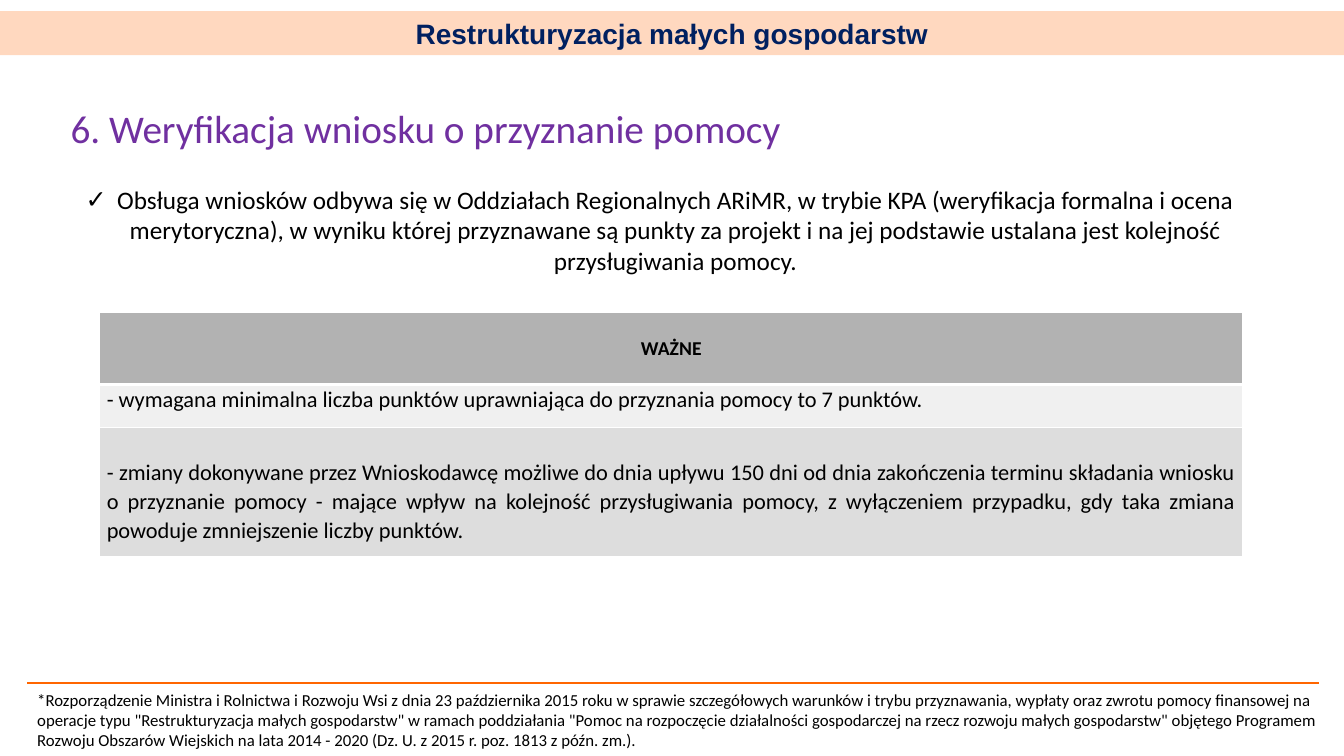
import pptx
import pptx.dml.color
import pptx.enum.shapes
import pptx.enum.text
import pptx.oxml
import pptx.oxml.ns
import pptx.util

Pt = pptx.util.Pt
ALIGN = pptx.enum.text.PP_ALIGN
ANCHOR = pptx.enum.text.MSO_ANCHOR
COLORS = {
    "text": "000000", "heading": "7030A0", "banner_text": "002060",
    "orange": "FF6600", "white": "FFFFFF",
    "head_row": "B2B2B2", "light_row": "F0F0F0", "dark_row": "DDDDDD",
}


def rgb(name):
    return pptx.dml.color.RGBColor.from_string(COLORS[name])


def add_xml(parent, xml):
    ns = pptx.oxml.ns.nsdecls("a")
    parent.append(pptx.oxml.parse_xml(xml.replace("/>", f" {ns}/>", 1)
                                      if xml.endswith("/>") and xml.count("<") == 1
                                      else xml.replace(">", f" {ns}>", 1)))


def write(tf, text, size=16, color="text", font="Calibri", bold=False,
          align=ALIGN.LEFT, spacing=1.0, after=0, bullet=None, indent=0):
    p = tf.paragraphs[0]
    p.alignment = align
    p.line_spacing = spacing
    p.space_before, p.space_after = Pt(0), Pt(after)
    if bullet:
        pPr = p._p.get_or_add_pPr()
        pPr.set("marL", str(Pt(indent)))
        pPr.set("indent", str(-Pt(indent)))
        add_xml(pPr, f'<a:buChar char="{bullet}"/>')
    r = p.add_run()
    r.text = text
    r.font.size, r.font.name, r.font.bold = Pt(size), font, bold
    r.font.color.rgb = rgb(color)


class Deck:
    def __init__(self, width, height):
        self.prs = pptx.Presentation()
        self.prs.slide_width, self.prs.slide_height = Pt(width), Pt(height)
        self.s = self.prs.slides.add_slide(self.prs.slide_layouts[1])

    def placeholder(self, idx, box, text, wrap=True, **fmt):
        sp = self.s.placeholders[idx]
        sp.left, sp.top, sp.width, sp.height = map(Pt, box)
        self.fill_frame(sp.text_frame, text, ANCHOR.TOP, wrap, **fmt)

    def fill_frame(self, tf, text, anchor, wrap=True, **fmt):
        tf.auto_size = pptx.enum.text.MSO_AUTO_SIZE.NONE
        tf.word_wrap, tf.vertical_anchor = wrap, anchor
        write(tf, text, **fmt)

    def banner(self, box, text, fill, alpha, **fmt):
        sp = self.s.shapes.add_shape(
            pptx.enum.shapes.MSO_SHAPE.RECTANGLE, *map(Pt, box))
        sp.shadow.inherit = False
        sp.line.fill.background()
        sp.fill.solid()
        sp.fill.fore_color.rgb = rgb(fill)
        color = sp._element.spPr.find(".//" + pptx.oxml.ns.qn("a:srgbClr"))
        add_xml(color, f'<a:alpha val="{alpha * 1000}"/>')
        self.fill_frame(sp.text_frame, text, ANCHOR.MIDDLE, **fmt)

    def textbox(self, box, text, **fmt):
        sp = self.s.shapes.add_textbox(*map(Pt, box))
        self.fill_frame(sp.text_frame, text, ANCHOR.TOP, **fmt)

    def rule(self, x1, x2, y, color, width):
        ln = self.s.shapes.add_connector(
            pptx.enum.shapes.MSO_CONNECTOR.STRAIGHT, Pt(x1), Pt(y), Pt(x2), Pt(y))
        ln.line.color.rgb, ln.line.width = rgb(color), Pt(width)
        add_xml(ln._element.spPr, "<a:effectLst/>")

    def table(self, left, top, width, rows):
        height = sum(row["height"] for row in rows)
        tbl = self.s.shapes.add_table(
            len(rows), 1, Pt(left), Pt(top), Pt(width), Pt(height)).table
        for i, row in enumerate(rows):
            tbl.rows[i].height = Pt(row["height"])
            cell = tbl.cell(i, 0)
            cell.margin_left = cell.margin_right = Pt(5)
            cell.margin_top, cell.margin_bottom = Pt(row.get("inset", 0)), Pt(0)
            cell.vertical_anchor = row.get("anchor", ANCHOR.TOP)
            # White borders, thicker between the header and the first row
            edges = {"L": 1, "R": 1, "T": 3 if i == 1 else 1, "B": 3 if i == 0 else 1}
            for edge, w in edges.items():
                add_xml(cell._tc.get_or_add_tcPr(),
                        f'<a:ln{edge} w="{Pt(w)}"><a:solidFill><a:srgbClr '
                        f'val="{COLORS["white"]}"/></a:solidFill></a:ln{edge}>')
            cell.fill.solid()
            cell.fill.fore_color.rgb = rgb(row["fill"])
            write(cell.text_frame, row["text"], **row["fmt"])


def main():
    deck = Deck(960, 540)

    # Main point
    deck.placeholder(
        1, (43.2, 128.2, 856, 72.7),
        "Obsługa wniosków odbywa się w Oddziałach Regionalnych ARiMR, w trybie KPA "
        "(weryfikacja formalna i ocena merytoryczna), w wyniku której przyznawane są "
        "punkty za projekt i na jej podstawie ustalana jest kolejność przysługiwania "
        "pomocy.",
        size=18, align=ALIGN.CENTER, bullet="✓", indent=22.5)

    # Table of key rules
    body = dict(align=ALIGN.JUSTIFY, spacing=1.07)
    deck.table(71.3, 223.2, 816.5, [
        dict(height=51.5, fill="head_row", anchor=ANCHOR.MIDDLE, text="WAŻNE",
             fmt=dict(size=14, bold=True, align=ALIGN.CENTER)),
        dict(height=30.7, fill="light_row", fmt=body,
             text="- wymagana minimalna liczba punktów uprawniająca do przyznania "
                  "pomocy to 7 punktów."),
        dict(height=92, fill="dark_row", inset=21, fmt=body,
             text="- zmiany dokonywane przez Wnioskodawcę możliwe do dnia upływu 150 "
                  "dni od dnia zakończenia terminu składania wniosku o przyznanie "
                  "pomocy - mające wpływ na kolejność przysługiwania pomocy, z "
                  "wyłączeniem przypadku, gdy taka zmiana powoduje zmniejszenie "
                  "liczby punktów."),
    ])

    # Title and banner
    deck.placeholder(0, (43.2, 68.4, 527, 41.8),
                     "6. Weryfikacja wniosku o przyznanie pomocy", wrap=False,
                     size=28, color="heading", spacing=1.07, after=8)
    deck.banner((0, 8, 960, 31.5), "Restrukturyzacja małych gospodarstw",
                "orange", 25, size=20, font="Arial", color="banner_text",
                bold=True, align=ALIGN.CENTER)

    # Footnote
    deck.rule(19.5, 942, 488, "orange", 1)
    deck.textbox(
        (19.5, 489, 940, 51),
        "*Rozporządzenie Ministra i Rolnictwa i Rozwoju Wsi z dnia 23 października "
        "2015 roku w sprawie szczegółowych warunków i trybu przyznawania, wypłaty oraz "
        "zwrotu pomocy finansowej na operacje typu \"Restrukturyzacja małych "
        "gospodarstw\" w ramach poddziałania \"Pomoc na rozpoczęcie działalności "
        "gospodarczej na rzecz rozwoju małych gospodarstw\" objętego Programem Rozwoju "
        "Obszarów Wiejskich na lata 2014 - 2020 (Dz. U. z 2015 r. poz. 1813 z późn. "
        "zm.).", size=12)

    deck.prs.save("out.pptx")


if __name__ == "__main__":
    main()
